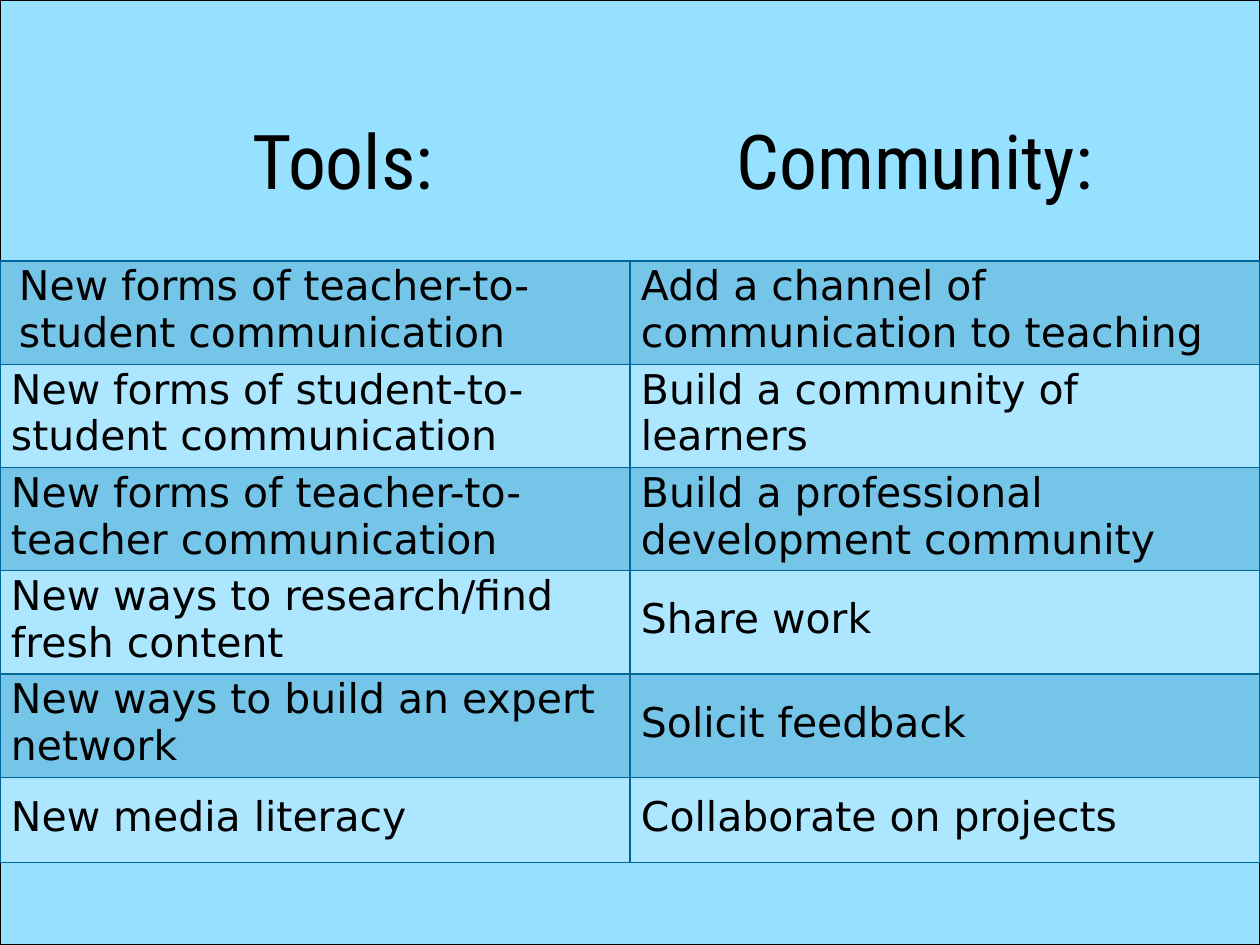
from dataclasses import dataclass

from lxml import etree
from pptx import Presentation
from pptx.dml.color import RGBColor
from pptx.enum.shapes import MSO_SHAPE
from pptx.enum.text import MSO_ANCHOR, PP_ALIGN
from pptx.oxml.ns import qn
from pptx.util import Emu, Pt

RECTANGLE = MSO_SHAPE.RECTANGLE
MIDDLE = MSO_ANCHOR.MIDDLE
CENTER, LEFT = PP_ALIGN.CENTER, PP_ALIGN.LEFT
EMU_PER_PX = 8064
SLIDE_W, SLIDE_H = 1260, 945


@dataclass(frozen=True)
class Theme:
    ground: str = "96E1FF"
    ink: str = "000000"
    accent: str = "006699"
    light: str = "FFFFFF"
    band_alpha: int = 22
    heading_font: str = "Roboto Condensed"
    body_font: str = "DejaVu Sans"
    heading_size: int = 48
    body_size: int = 26
    frame_width: float = 0.75
    border_width: int = 1


@dataclass(frozen=True)
class Heading:
    text: str
    left: int


@dataclass(frozen=True)
class Pair:
    tool: str
    community: str
    tool_indent: int = 0


THEME = Theme()
HEADINGS = [Heading("Tools:", 63), Heading("Community:", 635)]
PAIRS = [
    Pair("New forms of teacher-to-student communication",
         "Add a channel of communication to teaching", 8),
    Pair("New forms of student-to-student communication",
         "Build a community of learners"),
    Pair("New forms of teacher-to-teacher communication",
         "Build a professional development community"),
    Pair("New ways to research/find fresh content", "Share work"),
    Pair("New ways to build an expert network", "Solicit feedback"),
    Pair("New media literacy", "Collaborate on projects"),
]


def px(n: int) -> Emu:
    return Emu(n * EMU_PER_PX)


def rgb(color: str) -> RGBColor:
    return RGBColor.from_string(color)


def set_attrs(target, values: dict) -> None:
    for name, value in values.items():
        setattr(target, name, value)


def write(p, text: str, font: str, size: int, align, spacing: float) -> None:
    set_attrs(p, {"alignment": align, "line_spacing": spacing})
    r = p.add_run()
    r.text = text
    set_attrs(r.font, {"name": font, "size": Pt(size), "bold": False})
    r.font.color.rgb = rgb(THEME.ink)


def add_ground(s) -> None:
    sp = s.shapes.add_shape(RECTANGLE, 0, 0, px(SLIDE_W), px(SLIDE_H))
    sp.shadow.inherit = False
    sp.fill.solid()
    sp.fill.fore_color.rgb = rgb(THEME.ground)
    sp.line.color.rgb = rgb(THEME.ink)
    sp.line.width = Pt(THEME.frame_width)


def add_heading(s, heading: Heading) -> None:
    sp = s.shapes.add_textbox(px(heading.left), px(85), px(560), px(147))
    tf = sp.text_frame
    set_attrs(tf, {"word_wrap": True, "vertical_anchor": MIDDLE,
                   "margin_left": 0, "margin_top": 0,
                   "margin_right": 0, "margin_bottom": 0})
    write(tf.paragraphs[0], heading.text, THEME.heading_font,
          THEME.heading_size, CENTER, 1.02)


def add_borders(cell) -> None:
    tcPr = cell._tc.get_or_add_tcPr()
    for side in ("lnL", "lnR", "lnT", "lnB"):
        ln = etree.SubElement(tcPr, qn(f"a:{side}"),
                              w=str(Pt(THEME.border_width)))
        fill = etree.SubElement(ln, qn("a:solidFill"))
        etree.SubElement(fill, qn("a:srgbClr"), val=THEME.accent)


def fill_cell(cell, color: str) -> None:
    cell.fill.solid()
    cell.fill.fore_color.rgb = rgb(color)
    clr = cell._tc.tcPr.find(f"{qn('a:solidFill')}/{qn('a:srgbClr')}")
    etree.SubElement(clr, qn("a:alpha"), val=str(THEME.band_alpha * 1000))


def add_cell(cell, text: str, color: str, indent: int) -> None:
    set_attrs(cell, {"vertical_anchor": MIDDLE,
                     "margin_left": px(11), "margin_top": px(1),
                     "margin_right": px(11), "margin_bottom": px(6)})
    add_borders(cell)
    fill_cell(cell, color)
    p = cell.text_frame.paragraphs[0]
    write(p, text, THEME.body_font, THEME.body_size, LEFT, 0.98)
    if indent:
        p._p.get_or_add_pPr().set("marL", str(px(indent)))


def add_pairs(s, pairs: list[Pair]) -> None:
    frame = s.shapes.add_table(len(pairs), 2, 0, px(261), px(SLIDE_W), px(600))
    table = frame.table
    set_attrs(table, {"first_row": False, "horz_banding": False})
    for column in table.columns:
        column.width = px(SLIDE_W // 2)
    for i, pair in enumerate(pairs):
        table.rows[i].height = px(85)
        color = THEME.light if i % 2 else THEME.accent
        add_cell(table.cell(i, 0), pair.tool, color, pair.tool_indent)
        add_cell(table.cell(i, 1), pair.community, color, 0)
    frame.height = px(600)


def main() -> None:
    prs = Presentation()
    set_attrs(prs, {"slide_width": px(SLIDE_W), "slide_height": px(SLIDE_H)})
    s = prs.slides.add_slide(prs.slide_layouts[6])
    add_ground(s)
    for heading in HEADINGS:
        add_heading(s, heading)
    add_pairs(s, PAIRS)
    prs.save("out.pptx")


if __name__ == "__main__":
    main()
